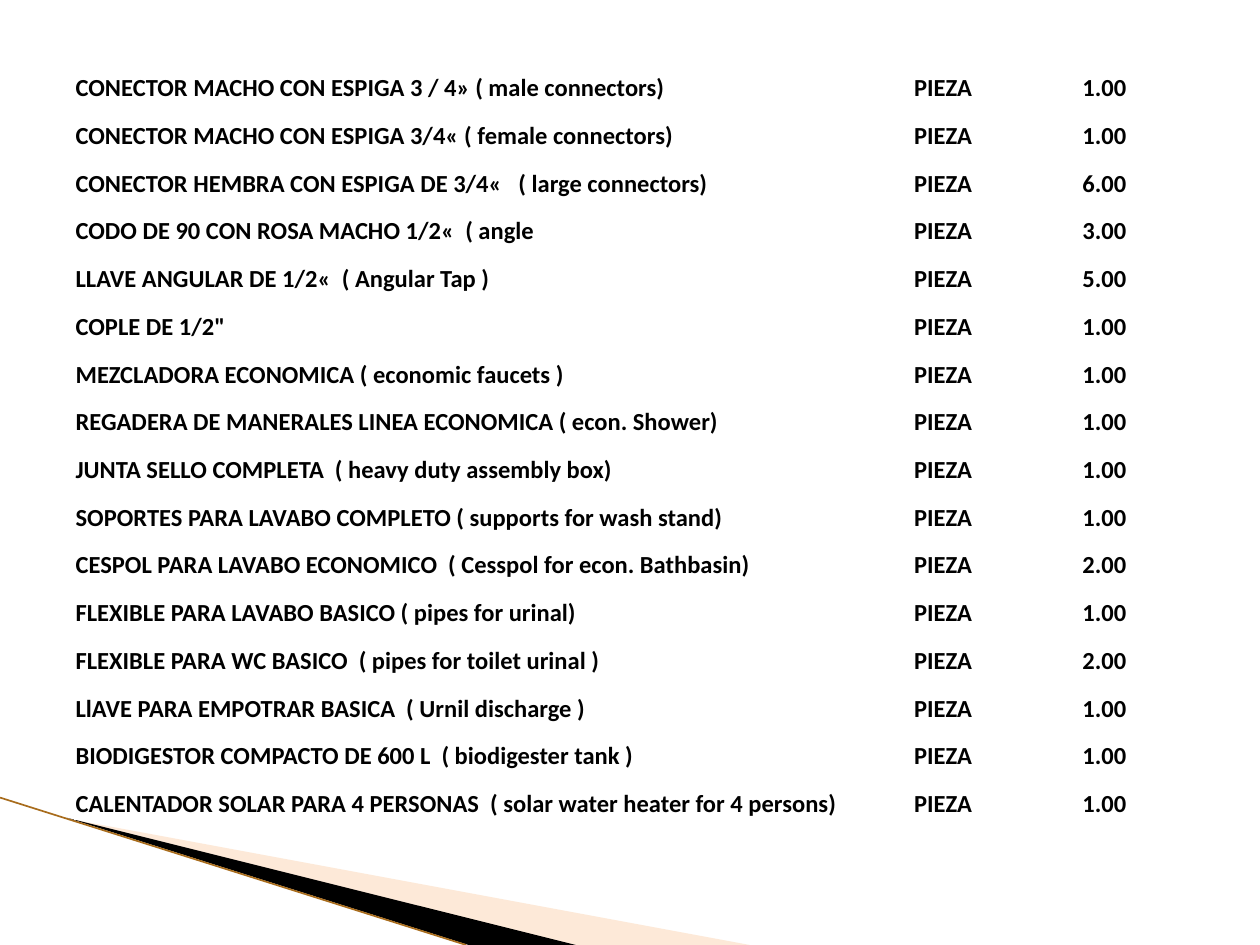
"""Build a slide listing plumbing materials with unit and quantity."""
from lxml import etree
from pptx import Presentation
from pptx.dml.color import RGBColor
from pptx.enum.shapes import MSO_CONNECTOR
from pptx.enum.text import MSO_ANCHOR, PP_ALIGN
from pptx.oxml.ns import qn
from pptx.util import Inches, Pt

LEFT, CENTER = PP_ALIGN.LEFT, PP_ALIGN.CENTER
BOTTOM = MSO_ANCHOR.BOTTOM
STRAIGHT = MSO_CONNECTOR.STRAIGHT

WIDTH, HEIGHT = 10, 7.5
UNIT = "PIEZA"
MATERIALS = [
    ("CONECTOR MACHO CON ESPIGA 3 / 4» ( male connectors)", 1),
    ("CONECTOR MACHO CON ESPIGA 3/4« ( female connectors)", 1),
    ("CONECTOR HEMBRA CON ESPIGA DE 3/4«   ( large connectors)", 6),
    ("CODO DE 90 CON ROSA MACHO 1/2«  ( angle", 3),
    ("LLAVE ANGULAR DE 1/2«  ( Angular Tap )", 5),
    ('COPLE DE 1/2"', 1),
    ("MEZCLADORA ECONOMICA ( economic faucets )", 1),
    ("REGADERA DE MANERALES LINEA ECONOMICA ( econ. Shower)", 1),
    ("JUNTA SELLO COMPLETA  ( heavy duty assembly box)", 1),
    ("SOPORTES PARA LAVABO COMPLETO ( supports for wash stand)", 1),
    ("CESPOL PARA LAVABO ECONOMICO  ( Cesspol for econ. Bathbasin)", 2),
    ("FLEXIBLE PARA LAVABO BASICO ( pipes for urinal)", 1),
    ("FLEXIBLE PARA WC BASICO  ( pipes for toilet urinal )", 2),
    ("LlAVE PARA EMPOTRAR BASICA  ( Urnil discharge )", 1),
    ("BIODIGESTOR COMPACTO DE 600 L  ( biodigester tank )", 1),
    ("CALENTADOR SOLAR PARA 4 PERSONAS  ( solar water heater for 4 persons)", 1),
]
TABLE_LEFT, TABLE_TOP, TABLE_HEIGHT = 0.59, 0.44, 6.06
COLUMNS = [(6.26, LEFT), (1.27, CENTER), (1.29, CENTER)]
WEDGES = [
    ([(0.55, 6.5), (5.95, HEIGHT), (4.56, HEIGHT)], "FBC99E", 40),
    ([(0.53, 6.49), (4.57, HEIGHT), (3.72, HEIGHT)], "000000", 100),
]
EDGE = [(0, 6.33), (3.7, HEIGHT)]


def color(value):
    """Turn a hex string into a colour."""
    return RGBColor.from_string(value)


def write(cell, text, align=LEFT, size=14, font="Calibri", ink="000000", bold=True):
    """Put formatted text in a table cell."""
    p = cell.text_frame.paragraphs[0]
    p.alignment = align
    r = p.add_run()
    r.text = text
    r.font.size, r.font.name, r.font.bold = Pt(size), font, bold
    r.font.color.rgb = color(ink)


def add_wedge(slide, points, fill, opacity):
    """Draw a filled triangle."""
    start, *rest = [(Inches(x), Inches(y)) for x, y in points]
    builder = slide.shapes.build_freeform(*start)
    builder.add_line_segments(rest, close=True)
    sp = builder.convert_to_shape()
    sp.shadow.inherit = False
    sp.fill.solid()
    sp.fill.fore_color.rgb = color(fill)
    sp.line.fill.background()
    if opacity < 100:
        tint = sp._element.spPr.find(".//" + qn("a:srgbClr"))
        etree.SubElement(tint, qn("a:alpha")).set("val", str(opacity * 1000))


def add_edge(slide, points, ink, width):
    """Draw a straight line without shadow."""
    (x1, y1), (x2, y2) = [(Inches(x), Inches(y)) for x, y in points]
    line = slide.shapes.add_connector(STRAIGHT, x1, y1, x2, y2)
    line.line.color.rgb = color(ink)
    line.line.width = Pt(width)
    etree.SubElement(line._element.spPr, qn("a:effectLst"))


def add_materials(slide):
    """Draw the table of materials."""
    total = sum(width for width, _ in COLUMNS)
    table = slide.shapes.add_table(
        len(MATERIALS), len(COLUMNS), Inches(TABLE_LEFT), Inches(TABLE_TOP),
        Inches(total), Inches(TABLE_HEIGHT)).table
    table.first_row = table.horz_banding = False
    for column, (width, _) in zip(table.columns, COLUMNS):
        column.width = Inches(width)
    for row, (name, quantity) in zip(table.rows, MATERIALS):
        row.height = Inches(TABLE_HEIGHT / len(MATERIALS))
        texts = (name, UNIT, f"{quantity:.2f}")
        for cell, text, (_, align) in zip(row.cells, texts, COLUMNS):
            cell.fill.background()
            cell.vertical_anchor = BOTTOM
            cell.margin_left = cell.margin_top = cell.margin_right = Inches(0.01)
            cell.margin_bottom = 0
            write(cell, text, align=align)


def main():
    """Build and save the slide."""
    prs = Presentation()
    prs.slide_width, prs.slide_height = Inches(WIDTH), Inches(HEIGHT)
    slide = prs.slides.add_slide(prs.slide_layouts[6])
    for wedge in WEDGES:
        add_wedge(slide, *wedge)
    add_edge(slide, EDGE, "A86C1C", 0.95)
    add_materials(slide)
    prs.save("out.pptx")


if __name__ == "__main__":
    main()
